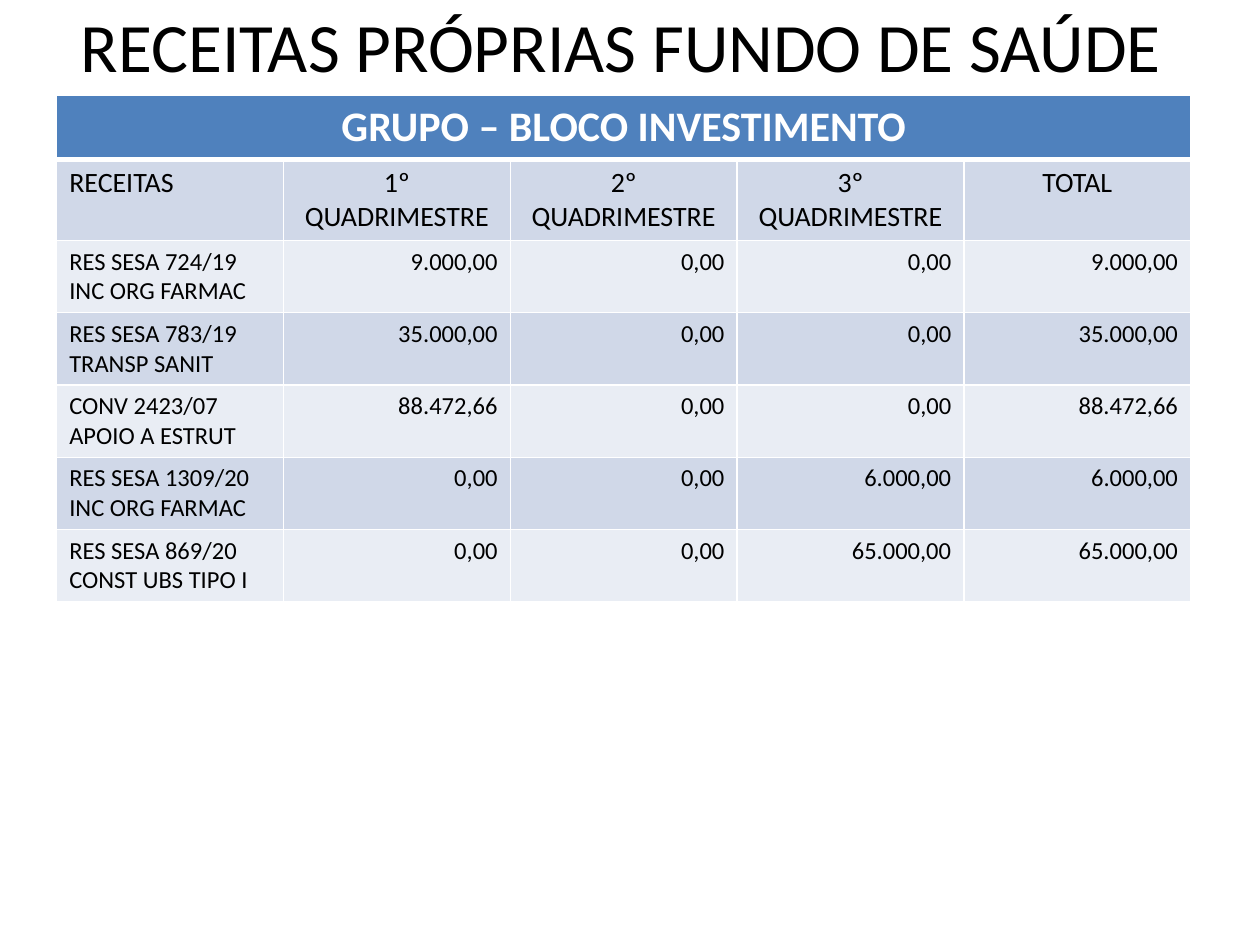
from dataclasses import dataclass

from lxml import etree
from pptx import Presentation
from pptx.dml.color import RGBColor
from pptx.enum.text import MSO_ANCHOR, MSO_AUTO_SIZE, PP_ALIGN
from pptx.oxml.ns import qn
from pptx.util import Inches, Pt

LEFT, CENTER, RIGHT = PP_ALIGN.LEFT, PP_ALIGN.CENTER, PP_ALIGN.RIGHT
MIDDLE, NO_FIT = MSO_ANCHOR.MIDDLE, MSO_AUTO_SIZE.NONE
WIDTH, HEIGHT = Inches(10), Inches(7.5)
TITLE_ONLY = 5
COLUMNS = 5
COLORS = {"ink": "000000", "white": "FFFFFF", "header": "4F81BD",
          "dark_band": "D0D8E8", "light_band": "E9EDF4"}


@dataclass(frozen=True)
class RowStyle:
    """Look of one kind of table row."""
    height: float
    size: float
    fill: str
    aligns: tuple
    color: str = "ink"
    bold: bool = False
    top: float = 1
    bottom: float = 1


HEADER = RowStyle(0.5, 24, "header", (CENTER,) * COLUMNS, "white", True, bottom=3)
LABELS = RowStyle(0.62, 16, "dark_band", (LEFT,) + (CENTER,) * 4, top=3)
BANDS = [RowStyle(0.57, 14, fill, (LEFT,) + (RIGHT,) * 4)
         for fill in ("light_band", "dark_band")]

RECEIPTS = [
    ("RES SESA 724/19\nINC ORG FARMAC", "9.000,00", "0,00", "0,00", "9.000,00"),
    ("RES SESA 783/19\nTRANSP SANIT", "35.000,00", "0,00", "0,00", "35.000,00"),
    ("CONV 2423/07\nAPOIO A ESTRUT", "88.472,66", "0,00", "0,00", "88.472,66"),
    ("RES SESA 1309/20\nINC ORG FARMAC", "0,00", "0,00", "6.000,00", "6.000,00"),
    ("RES SESA 869/20\nCONST UBS TIPO I", "0,00", "0,00", "65.000,00", "65.000,00"),
]
ROWS = [
    (HEADER, ("GRUPO – BLOCO INVESTIMENTO", "", "", "", "")),
    (LABELS, ("RECEITAS", *(f"{n}º QUADRIMESTRE" for n in (1, 2, 3)), "TOTAL")),
    *((BANDS[i % 2], receipt) for i, receipt in enumerate(RECEIPTS)),
]


def write_text(frame, text: str, align, size: float, color: str, bold: bool = False) -> None:
    """Fill a text frame with equally formatted paragraphs."""
    frame.text = text
    for para in frame.paragraphs:
        para.alignment = align
        for span in para.runs:
            formats = {"name": "Calibri", "size": Pt(size), "bold": bold}
            for attribute, value in formats.items():
                setattr(span.font, attribute, value)
            span.font.color.rgb = RGBColor.from_string(COLORS[color])


def draw_borders(cell, style: RowStyle) -> None:
    """Give a cell white borders, ahead of its fill."""
    properties = cell._tc.get_or_add_tcPr()
    widths = {"a:lnL": 1, "a:lnR": 1, "a:lnT": style.top, "a:lnB": style.bottom}
    for index, (tag, width) in enumerate(widths.items()):
        line = etree.Element(qn(tag), w=str(Pt(width)))
        fill = etree.SubElement(line, qn("a:solidFill"))
        etree.SubElement(fill, qn("a:srgbClr"), val=COLORS["white"])
        properties.insert(index, line)


def add_title(page) -> None:
    """Place and write the slide title."""
    title = page.shapes.title
    box = {"left": 0.043 * WIDTH, "top": 0, "width": 0.9 * WIDTH, "height": 0.095 * HEIGHT}
    for attribute, value in box.items():
        setattr(title, attribute, int(value))
    formats = {"auto_size": NO_FIT, "vertical_anchor": MIDDLE, "word_wrap": True}
    for attribute, value in formats.items():
        setattr(title.text_frame, attribute, value)
    write_text(title.text_frame, "RECEITAS PRÓPRIAS FUNDO DE SAÚDE", CENTER, 39.6, "ink")


def add_receipts_table(page) -> None:
    """Draw the table of receipts by four-month period."""
    height = Inches(sum(style.height for style, _ in ROWS))
    table = page.shapes.add_table(len(ROWS), COLUMNS, int(0.045 * WIDTH),
                                  int(0.101 * HEIGHT), int(0.9 * WIDTH), height).table
    for row, (style, texts) in zip(table.rows, ROWS):
        row.height = Inches(style.height)
        for cell, text, align in zip(row.cells, texts, style.aligns):
            write_text(cell.text_frame, text, align, style.size, style.color, style.bold)
            cell.fill.solid()
            cell.fill.fore_color.rgb = RGBColor.from_string(COLORS[style.fill])
            draw_borders(cell, style)
    table.cell(0, 0).merge(table.cell(0, COLUMNS - 1))


def main() -> None:
    """Build and save the deck."""
    deck = Presentation()
    deck.slide_width, deck.slide_height = WIDTH, HEIGHT
    page = deck.slides.add_slide(deck.slide_layouts[TITLE_ONLY])
    add_title(page)
    add_receipts_table(page)
    deck.save("out.pptx")


if __name__ == "__main__":
    main()
